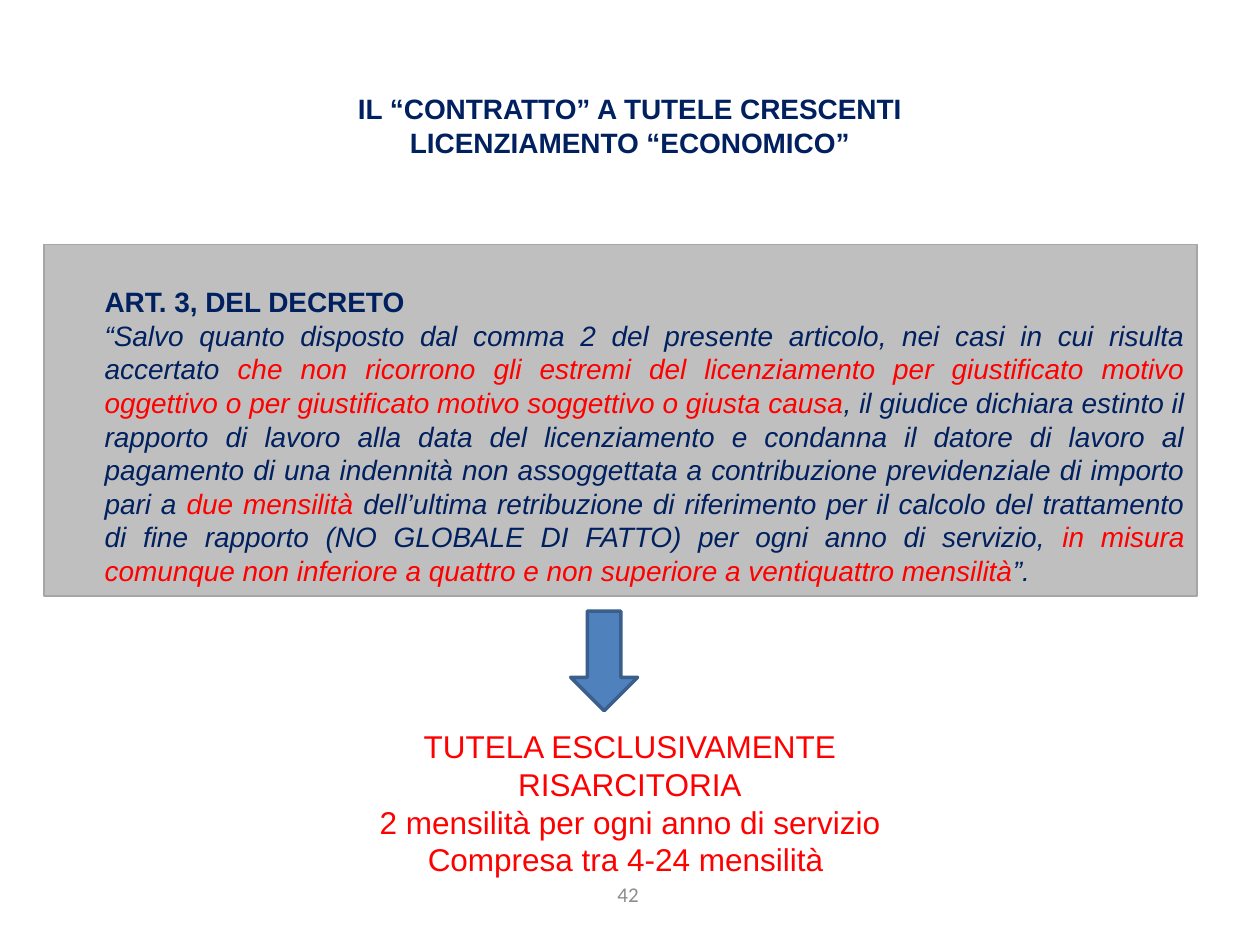
from dataclasses import dataclass
from pptx import Presentation
from pptx.dml.color import RGBColor as RGB
from pptx.enum.shapes import MSO_SHAPE as Kind
from pptx.enum.text import MSO_ANCHOR as Anchor, MSO_AUTO_SIZE as Fit, PP_ALIGN as Align
from pptx.util import Inches, Pt


@dataclass(frozen=True)
class Theme:
    navy: RGB = RGB(0x00, 0x20, 0x60)
    red: RGB = RGB(0xFF, 0x00, 0x00)
    gray: RGB = RGB(0xBF, 0xBF, 0xBF)
    edge: RGB = RGB(0xA6, 0xA6, 0xA6)
    blue: RGB = RGB(0x4F, 0x81, 0xBD)
    rim: RGB = RGB(0x3A, 0x5F, 0x8C)
    dim: RGB = RGB(0x8C, 0x8C, 0x8C)
    font: str = "Arial"
    foot: str = "Calibri"
    body: int = 16
    large: int = 18
    small: int = 12


T = Theme()


def place(shape, box):
    shape.left, shape.top, shape.width, shape.height = map(Inches, box)


def write(shape, paras, size, align, anchor=Anchor.TOP, font=T.font):
    frame = shape.text_frame
    frame.word_wrap = True
    frame.auto_size = Fit.NONE
    frame.vertical_anchor = anchor
    for i, runs in enumerate(paras):
        para = frame.add_paragraph() if i else frame.paragraphs[0]
        para.alignment = align
        for text, color, bold, slant in runs:
            run = para.add_run()
            run.text = text
            run.font.name = font
            run.font.size = Pt(size)
            run.font.bold = bold
            run.font.italic = slant
            run.font.color.rgb = color


def add_form(slide, kind, box, fill, line, width):
    shape = slide.shapes.add_shape(kind, *map(Inches, box))
    shape.shadow.inherit = False
    shape.fill.solid()
    shape.fill.fore_color.rgb = fill
    shape.line.color.rgb = line
    shape.line.width = Pt(width)
    return shape


def add_title(slide, box):
    title = slide.shapes.title
    place(title, box)
    lines = ["IL “CONTRATTO” A TUTELE CRESCENTI", "LICENZIAMENTO “ECONOMICO”"]
    write(title, [[(line, T.navy, True, False)] for line in lines], T.body, Align.CENTER)


def add_law(slide, box):
    panel = add_form(slide, Kind.RECTANGLE, box, T.gray, T.edge, 0.75)
    panel.text_frame.margin_left = Inches(0.48)
    panel.text_frame.margin_top = Inches(0.32)
    parts = [
        ("“Salvo quanto disposto dal comma 2 del presente articolo, nei casi in cui "
         "risulta accertato ", T.navy),
        ("che non ricorrono gli estremi del licenziamento per giustificato motivo "
         "oggettivo o per giustificato motivo soggettivo o giusta causa", T.red),
        (", il giudice dichiara estinto il rapporto di lavoro alla data del "
         "licenziamento e condanna il datore di lavoro al pagamento di una indennità "
         "non assoggettata a contribuzione previdenziale di importo pari a ", T.navy),
        ("due mensilità ", T.red),
        ("dell’ultima retribuzione di riferimento per il calcolo del trattamento di "
         "fine rapporto (NO GLOBALE DI FATTO) per ogni anno di servizio, ", T.navy),
        ("in misura comunque non inferiore a quattro e non superiore a ventiquattro "
         "mensilità", T.red),
        ("”.", T.navy),
    ]
    head = [("ART. 3, DEL DECRETO", T.navy, True, False)]
    quote = [(text, color, False, True) for text, color in parts]
    write(panel, [head, quote], T.body, Align.JUSTIFY)


def add_arrow(slide, box):
    add_form(slide, Kind.DOWN_ARROW, box, T.blue, T.rim, 2)


def add_result(slide, box):
    lines = [
        "TUTELA ESCLUSIVAMENTE RISARCITORIA",
        "2 mensilità per ogni anno di servizio",
        "Compresa tra 4-24 mensilità ",
    ]
    note = slide.shapes.add_textbox(*map(Inches, box))
    write(note, [[(line, T.red, False, False)] for line in lines], T.large, Align.CENTER)


def add_number(slide, box):
    label = slide.shapes.add_textbox(*map(Inches, box))
    write(label, [[("42", T.dim, False, False)]], T.small, Align.CENTER,
          Anchor.MIDDLE, T.foot)


def main():
    deck = Presentation()
    deck.slide_width, deck.slide_height = Inches(10), Inches(7.5)
    slide = deck.slides.add_slide(deck.slide_layouts[5])
    add_number(slide, (3.82, 6.9, 2.33, 0.4))
    add_title(slide, (2.5, 0.68, 5, 0.94))
    add_law(slide, (0.35, 1.94, 9.15, 2.79))
    add_arrow(slide, (4.53, 4.85, 0.53, 0.79))
    add_result(slide, (2.5, 5.72, 5, 1.31))
    deck.save("out.pptx")


if __name__ == "__main__":
    main()
